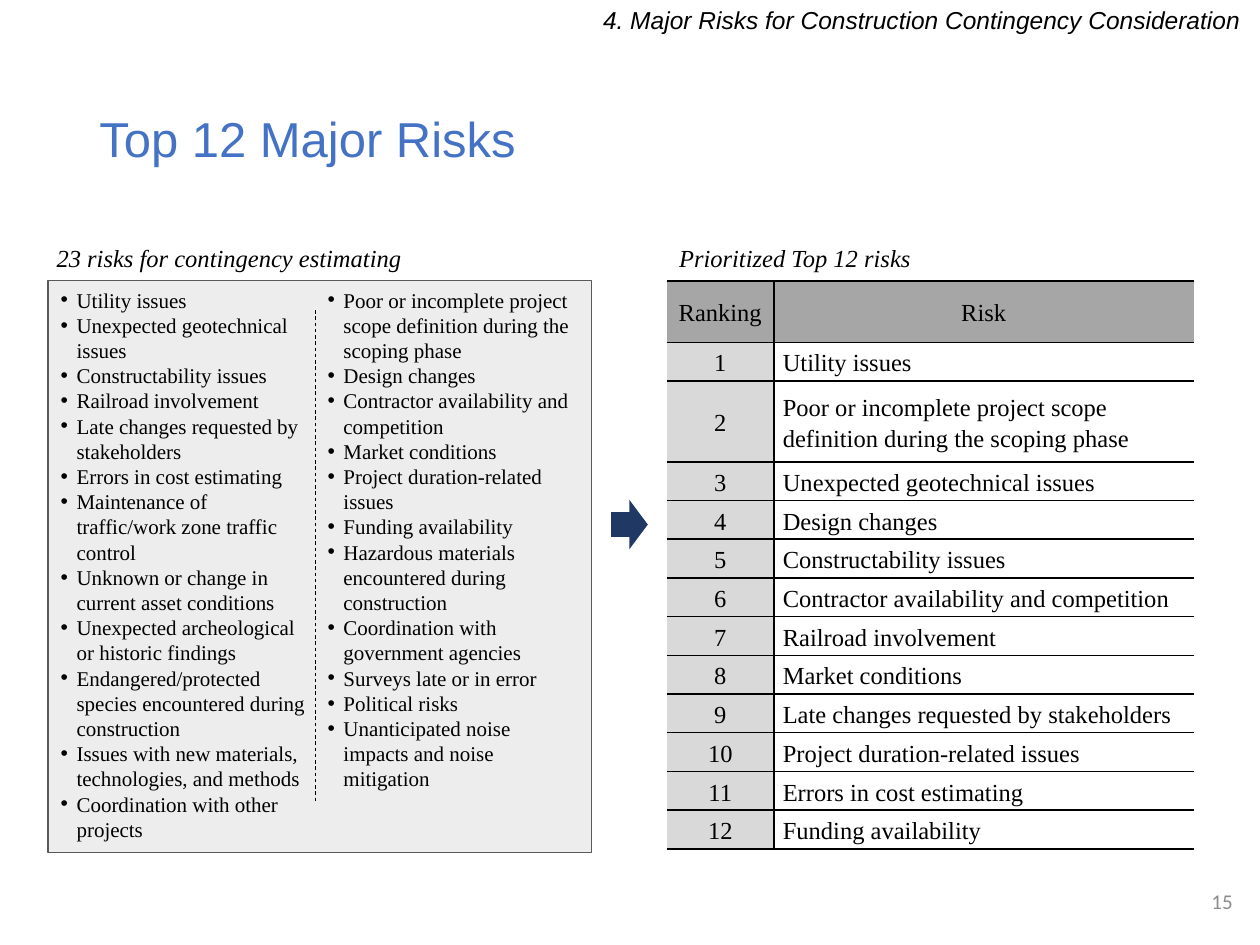
from dataclasses import dataclass, field

from lxml.etree import SubElement
from pptx import Presentation
from pptx.dml.color import RGBColor
from pptx.enum.dml import MSO_LINE
from pptx.enum.shapes import MSO_CONNECTOR, MSO_SHAPE
from pptx.enum.text import MSO_ANCHOR, MSO_AUTO_SIZE, PP_ALIGN
from pptx.oxml.ns import qn
from pptx.util import Cm, Pt

HUES = {
    "ink": "000000", "title": "4472C4", "page": "8C8C8C", "panel": "EDEDED",
    "edge": "595959", "arrow": "203864", "head": "A6A6A6", "rank": "D9D9D9",
    "paper": "FFFFFF",
}
SERIF, SANS = "Times New Roman", "Arial"

LEFT = [
    "Utility issues",
    "Unexpected geotechnical issues",
    "Constructability issues",
    "Railroad involvement",
    "Late changes requested by stakeholders",
    "Errors in cost estimating",
    "Maintenance of traffic/work zone traffic control",
    "Unknown or change in current asset conditions",
    "Unexpected archeological or historic findings",
    "Endangered/protected species encountered during construction",
    "Issues with new materials, technologies, and methods",
    "Coordination with other projects",
]
RIGHT = [
    "Poor or incomplete project scope definition during the scoping phase",
    "Design changes",
    "Contractor availability and competition",
    "Market conditions",
    "Project duration-related issues",
    "Funding availability",
    "Hazardous materials encountered during construction",
    "Coordination with government agencies",
    "Surveys late or in error",
    "Political risks",
    "Unanticipated noise impacts and noise mitigation",
]
TOP = [LEFT[0], RIGHT[0], LEFT[1], RIGHT[1], LEFT[2], RIGHT[2],
       LEFT[3], RIGHT[3], LEFT[4], RIGHT[4], LEFT[5], RIGHT[5]]


@dataclass
class Box:
    x: float
    y: float
    w: float
    h: float

    def dims(self) -> tuple:
        return tuple(Cm(v) for v in (self.x, self.y, self.w, self.h))


@dataclass
class Label:
    text: str
    box: Box
    size: int = 14
    face: str = SERIF
    hue: str = "ink"
    italic: bool = True
    fill: str = ""
    frame: dict = field(default_factory=dict)
    para: dict = field(default_factory=dict)


def rgb(name: str) -> RGBColor:
    return RGBColor.from_string(HUES[name])


def put(thing, values: dict) -> None:
    """Set each attribute named in values."""
    for name, value in values.items():
        setattr(thing, name, value)


def place(shape, box: Box) -> None:
    put(shape, dict(zip(("left", "top", "width", "height"), box.dims())))


def paint(shape, name: str) -> None:
    shape.fill.solid()
    shape.fill.fore_color.rgb = rgb(name)


def write(para, text: str, size: int, face: str = SERIF, hue: str = "ink",
          italic: bool = False, **style) -> None:
    run = para.add_run()
    run.text = text
    put(run.font, {"size": Pt(size), "name": face, "italic": italic, "bold": False})
    run.font.color.rgb = rgb(hue)
    put(para, style)


def draw_label(slide, item: Label) -> None:
    shape = slide.shapes.add_textbox(*item.box.dims())
    put(shape.text_frame, item.frame)
    if item.fill:
        paint(shape, item.fill)
    write(shape.text_frame.paragraphs[0], item.text, item.size, item.face,
          item.hue, item.italic, **item.para)


def draw_shape(slide, kind: MSO_SHAPE, box: Box, hue: str):
    shape = slide.shapes.add_shape(kind, *box.dims())
    shape.shadow.inherit = False
    paint(shape, hue)
    shape.line.fill.background()
    return shape


def fill_list(shape, box: Box, items: list[str]) -> None:
    place(shape, box)
    frame = shape.text_frame
    put(frame, {"auto_size": MSO_AUTO_SIZE.NONE, "word_wrap": True})
    for i, text in enumerate(items):
        para = frame.add_paragraph() if i else frame.paragraphs[0]
        write(para, text, 12, space_before=Pt(0), line_spacing=1.0)
        props = para._p.get_or_add_pPr()
        props.set("marL", str(Cm(0.32)))
        props.set("indent", str(-Cm(0.32)))
        SubElement(props, qn("a:buFont"), typeface=SANS)
        SubElement(props, qn("a:buChar"), char="•")


def rule_cell(cell, col: int) -> None:
    """Rule a cell above, below and on its inner side only."""
    props = cell._tc.get_or_add_tcPr()
    inner = "R" if col == 0 else "L"
    for side in "LRTB":
        line = SubElement(props, qn(f"a:ln{side}"), w=str(Pt(1)))
        if side in inner + "TB":
            ink = SubElement(line, qn("a:solidFill"))
            SubElement(ink, qn("a:srgbClr"), val=HUES["ink"])
        else:
            SubElement(line, qn("a:noFill"))


def draw_table(slide, box: Box) -> None:
    rows = [("Ranking", "Risk")]
    rows += [(str(n), risk) for n, risk in enumerate(TOP, 1)]
    table = slide.shapes.add_table(len(rows), 2, *box.dims()).table
    put(table, {"first_row": False, "horz_banding": False})
    for col, width in zip(table.columns, (2.16, 8.46)):
        col.width = Cm(width)
    tall = {0: 1.24, 2: 1.63}
    for r, texts in enumerate(rows):
        table.rows[r].height = Cm(tall.get(r, 0.78))
        for c, text in enumerate(texts):
            cell = table.cell(r, c)
            put(cell, {"margin_left": Cm(0.18), "margin_right": Cm(0.18),
                       "margin_top": 0, "margin_bottom": 0,
                       "vertical_anchor": MSO_ANCHOR.MIDDLE})
            rule_cell(cell, c)
            if r and c:
                cell.fill.background()
            else:
                paint(cell, "rank" if r else "head")
            side = PP_ALIGN.LEFT if r and c else PP_ALIGN.CENTER
            write(cell.text_frame.paragraphs[0], text, 14, alignment=side,
                  line_spacing=1.15, space_before=Pt(6), space_after=Pt(6))


def draw_split(slide) -> None:
    """Dashed rule between the two lists."""
    line = slide.shapes.add_connector(
        MSO_CONNECTOR.STRAIGHT, Cm(6.35), Cm(6.25), Cm(6.35), Cm(16.18))
    line.line.color.rgb = rgb("ink")
    put(line.line, {"width": Pt(0.5), "dash_style": MSO_LINE.DASH})
    SubElement(line._element.spPr, qn("a:effectLst"))


def main() -> None:
    deck = Presentation()
    put(deck, {"slide_width": Cm(25.4), "slide_height": Cm(19.05)})
    slide = deck.slides.add_slide(deck.slide_layouts[3])
    title, first, second = slide.placeholders

    place(title, Box(1.75, 1.02, 21.9, 3.68))
    title.text_frame.vertical_anchor = MSO_ANCHOR.MIDDLE
    write(title.text_frame.paragraphs[0], "Top 12 Major Risks", 28, SANS,
          "title", alignment=PP_ALIGN.LEFT, line_spacing=0.9)

    panel = draw_shape(slide, MSO_SHAPE.RECTANGLE, Box(0.97, 5.66, 10.95, 11.53), "panel")
    panel.line.color.rgb = rgb("edge")
    panel.line.width = Pt(0.75)
    first._element.addprevious(panel._element)
    fill_list(first, Box(0.97, 5.66, 5.56, 11.53), LEFT)
    fill_list(second, Box(6.35, 5.66, 5.56, 10.52), RIGHT)
    draw_split(slide)

    draw_shape(slide, MSO_SHAPE.RIGHT_ARROW, Box(12.32, 10.08, 0.74, 0.99), "arrow")
    draw_table(slide, Box(13.44, 5.66, 10.62, 11.45))

    right = {"alignment": PP_ALIGN.RIGHT}
    for item in (
        Label("23 risks for contingency estimating", Box(0.89, 4.78, 7.67, 0.86),
              fill="paper", frame={"word_wrap": False}),
        Label("Prioritized Top 12 risks", Box(13.44, 4.78, 5.23, 0.86),
              frame={"word_wrap": False}),
        Label("4. Major Risks for Construction Contingency Consideration ",
              Box(11, 0.05, 14.4, 1.02), face=SANS, frame={"word_wrap": True},
              para={**right, "line_spacing": 0.9, "space_before": Pt(10)}),
        Label("15", Box(19.38, 17.65, 5.72, 1.02), 12, "Calibri", "page", False,
              frame={"word_wrap": True, "vertical_anchor": MSO_ANCHOR.MIDDLE},
              para=right),
    ):
        draw_label(slide, item)
    deck.save("out.pptx")


if __name__ == "__main__":
    main()
